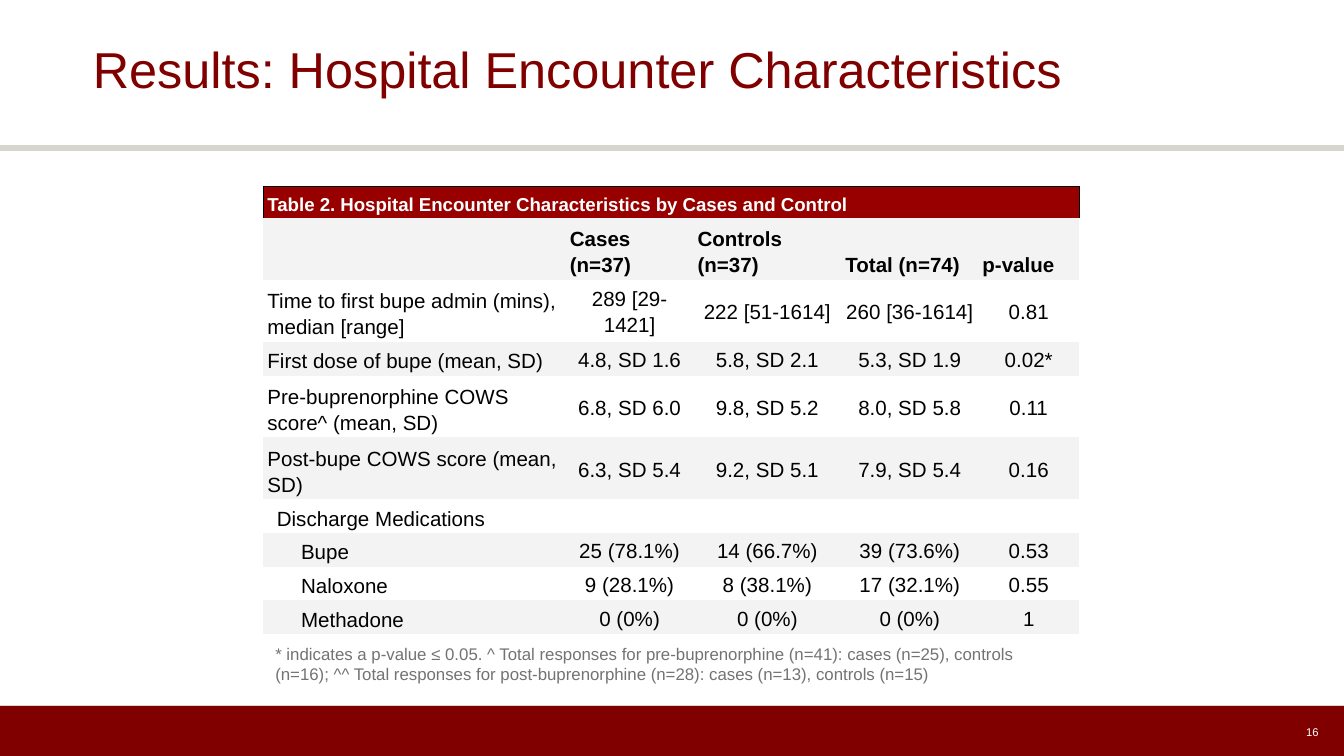
from lxml import etree
from pptx import Presentation
from pptx.dml.color import RGBColor
from pptx.enum.shapes import MSO_CONNECTOR, MSO_SHAPE
from pptx.enum.text import MSO_ANCHOR, PP_ALIGN
from pptx.oxml.ns import qn
from pptx.util import Inches, Pt

LEFT, MID, RIGHT = PP_ALIGN.LEFT, PP_ALIGN.CENTER, PP_ALIGN.RIGHT
TOP, CENTER, BOTTOM = MSO_ANCHOR.TOP, MSO_ANCHOR.MIDDLE, MSO_ANCHOR.BOTTOM
PLAIN = "{2D5ABB26-0587-4C30-8999-92F81FD0307C}"
MAROON, GREY, BLACK, WHITE = "800000", "D6D6CE", "000000", "FFFFFF"
BANDS = ("F3F3F3", WHITE)

TITLE = "Results: Hospital Encounter Characteristics"
NAME = "Table 2. Hospital Encounter Characteristics by Cases and Control"
NOTE = (
    "* indicates a p-value ≤ 0.05. ^ Total responses for pre-buprenorphine (n=41): "
    "cases (n=25), controls (n=16); ^^ Total responses for post-buprenorphine (n=28): "
    "cases (n=13), controls (n=15)"
)
PAGE = "16"
HEADS = ("", "Cases (n=37)", "Controls (n=37)", "Total (n=74)", "p-value")
ROWS = [
    (HEADS, 0.03),
    (("Time to first bupe admin (mins), median [range]",
      "289 [29-1421]", "222 [51-1614]", "260 [36-1614]", "0.81"), 0.03),
    (("First dose of bupe (mean, SD)",
      "4.8, SD 1.6", "5.8, SD 2.1", "5.3, SD 1.9", "0.02*"), 0.03),
    (("Pre-buprenorphine COWS score^ (mean, SD)",
      "6.8, SD 6.0", "9.8, SD 5.2", "8.0, SD 5.8", "0.11"), 0.03),
    (("Post-bupe COWS score (mean, SD)",
      "6.3, SD 5.4", "9.2, SD 5.1", "7.9, SD 5.4", "0.16"), 0.03),
    (("Discharge Medications", "", "", "", ""), 0.1),
    (("Bupe", "25 (78.1%)", "14 (66.7%)", "39 (73.6%)", "0.53"), 0.28),
    (("Naloxone", "9 (28.1%)", "8 (38.1%)", "17 (32.1%)", "0.55"), 0.28),
    (("Methadone", "0 (0%)", "0 (0%)", "0 (0%)", "1"), 0.28),
]
COLS = (2.25, 0.95, 1.1, 1.02, 0.75)
HIGHS = (0.22, 0.22, 0.11, 0.11, 0.11, 0.12, 0.11, 0.22, 0.22, 0.22)
SIDES = ("margin_left", "margin_top", "margin_right", "margin_bottom")


def color(code):
    return RGBColor.from_string(code)


def paint(fill, code):
    fill.solid()
    fill.fore_color.rgb = color(code)


def write(frame, text, size, code, align=LEFT, space=1.0, bold=False):
    para = frame.paragraphs[0]
    para.alignment, para.line_spacing = align, space
    if not text:
        etree.SubElement(para._p, qn("a:endParaRPr"), sz=str(size * 100))
        return
    run = para.add_run()
    run.text = text
    look = {"name": "Arial", "size": Pt(size), "bold": bold}
    for key, value in look.items():
        setattr(run.font, key, value)
    run.font.color.rgb = color(code)


def inset(item, pads, anchor):
    for side, pad in zip(SIDES, pads):
        setattr(item, side, Inches(pad))
    item.vertical_anchor = anchor


def place(shape, box):
    for key, value in zip(("left", "top", "width", "height"), box):
        setattr(shape, key, Inches(value))


def label(slide, box, pads, anchor, *style):
    frame = slide.shapes.add_textbox(*map(Inches, box)).text_frame
    frame.word_wrap = True
    inset(frame, pads, anchor)
    write(frame, *style)


def rule(slide, y, width):
    line = slide.shapes.add_connector(
        MSO_CONNECTOR.STRAIGHT, 0, Inches(y), Inches(10), Inches(y))
    line.line.color.rgb = color(GREY)
    line.line.width = Pt(width)
    etree.SubElement(line._element.spPr, qn("a:effectLst"))


def edge(cell):
    props = cell._tc.get_or_add_tcPr()
    for spot, tag in enumerate(("a:lnL", "a:lnR", "a:lnT")):
        line = etree.Element(qn(tag), w=str(Pt(0.75)))
        fill = etree.SubElement(line, qn("a:solidFill"))
        etree.SubElement(fill, qn("a:srgbClr"), val=BLACK)
        props.insert(spot, line)


def build(slide):
    box = (1.96, 1.39, sum(COLS), 3.17)
    holder = slide.shapes.add_table(
        len(HIGHS), len(COLS), *map(Inches, box))
    table = holder.table
    table.first_row = table.horz_banding = False
    table._tbl.tblPr.find(qn("a:tableStyleId")).text = PLAIN
    for col, width in zip(table.columns, COLS):
        col.width = Inches(width)
    for row, high in zip(table.rows, HIGHS):
        row.height = Inches(high)
    place(holder, box)

    head = table.cell(0, 0)
    head.merge(table.cell(0, len(COLS) - 1))
    inset(head, (0.03, 0.02, 0.03, 0.02), BOTTOM)
    paint(head.fill, "980000")
    write(head.text_frame, NAME, 10, WHITE, LEFT, 1.15, True)
    edge(head)

    for r, (texts, left) in enumerate(ROWS):
        for c, text in enumerate(texts):
            cell = table.cell(r + 1, c)
            top = r == 0
            side = top or c == 0
            pad = 0.03 if c else left
            inset(cell, (pad, 0.02, 0.03, 0.02), BOTTOM if side else CENTER)
            paint(cell.fill, BANDS[r % 2])
            write(cell.text_frame, text, 11, BLACK,
                  LEFT if side else MID, 1.15, top)


def main():
    deck = Presentation()
    deck.slide_width = Inches(10)
    deck.slide_height = deck.slide_width * 9 // 16
    slide = deck.slides.add_slide(deck.slide_layouts[5])

    rule(slide, 1.1, 3)
    bar = slide.shapes.add_shape(
        MSO_SHAPE.RECTANGLE, 0, Inches(5.25), Inches(10), Inches(0.38))
    bar.shadow.inherit = False
    paint(bar.fill, MAROON)
    bar.line.fill.background()
    rule(slide, 5.25, 0.75)

    title = slide.shapes.title
    place(title, (0.69, 0, 8.62, 1.08))
    inset(title.text_frame, (0, 0.04, 0, 0.04), CENTER)
    write(title.text_frame, TITLE, 27, MAROON, LEFT, 0.9)

    label(slide, (7.06, 5.3, 2.82, 0.3), (0.07, 0.04, 0.07, 0.04), CENTER,
          PAGE, 6, WHITE, RIGHT)
    build(slide)
    label(slide, (1.95, 4.69, 5.91, 0.53), (0.1,) * 4, TOP, NOTE, 9, "737373")
    deck.save("out.pptx")


if __name__ == "__main__":
    main()
